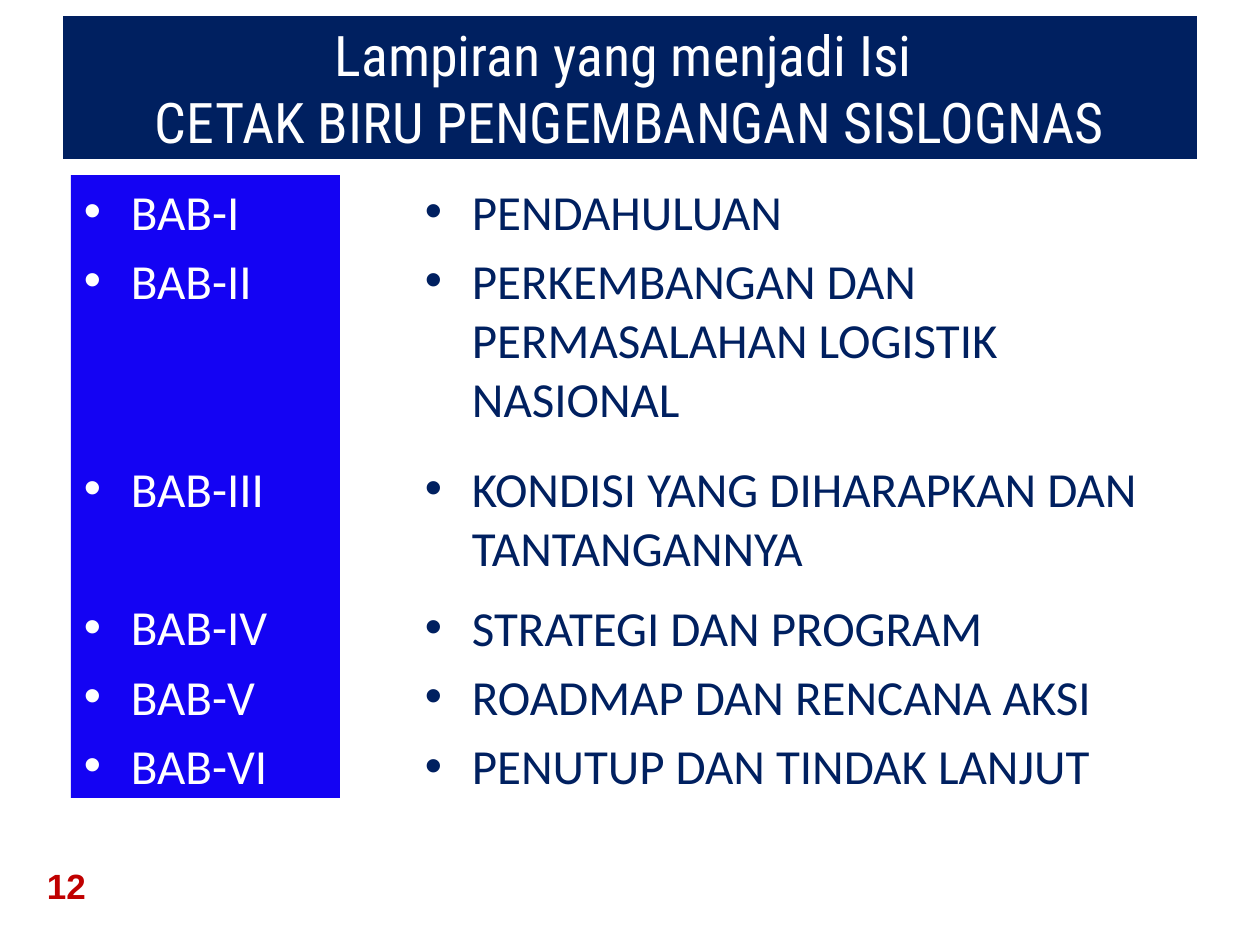
from dataclasses import dataclass

from lxml import etree
from pptx import Presentation
from pptx.dml.color import RGBColor
from pptx.enum.text import MSO_ANCHOR, MSO_AUTO_SIZE, PP_ALIGN
from pptx.oxml.ns import qn
from pptx.util import Emu, Pt

TOP, MIDDLE = MSO_ANCHOR.TOP, MSO_ANCHOR.MIDDLE
LEFT, CENTER = PP_ALIGN.LEFT, PP_ALIGN.CENTER
NO_AUTOFIT = MSO_AUTO_SIZE.NONE
TWO_CONTENT = 3  # layout with a title and two lists


@dataclass(frozen=True)
class Theme:
    navy: str = "002060"
    blue: str = "1403F3"
    white: str = "FFFFFF"
    red: str = "C00000"
    title_font: str = "Roboto Condensed"
    list_font: str = "Calibri"
    number_font: str = "Arial"
    title_size: int = 32
    list_size: int = 28
    number_size: int = 20
    gap: int = 6
    row: float = 39.6  # one list line with its gap


THEME = Theme()

# Chapter, title, gap before each in points
CHAPTERS = [
    ("BAB-I", THEME.gap, "PENDAHULUAN", THEME.gap),
    ("BAB-II", THEME.gap, "PERKEMBANGAN DAN PERMASALAHAN LOGISTIK NASIONAL", THEME.gap),
    ("BAB-III", THEME.gap + 2 * THEME.row, "KONDISI YANG DIHARAPKAN DAN TANTANGANNYA", 3 * THEME.gap),
    ("BAB-IV", THEME.gap + THEME.row, "STRATEGI DAN PROGRAM", 2 * THEME.gap),
    ("BAB-V", THEME.gap, "ROADMAP DAN RENCANA AKSI", THEME.gap),
    ("BAB-VI", THEME.gap, "PENUTUP DAN TINDAK LANJUT", THEME.gap),
]


def px(n):
    return Emu(round(n * 914400 / 126))


def place(sp, x, y, w, h, fill=None):
    sp.left, sp.top, sp.width, sp.height = px(x), px(y), px(w), px(h)
    if fill:
        sp.fill.solid()
        sp.fill.fore_color.rgb = RGBColor.from_string(fill)


def set_frame(tf, anchor=TOP, inset_x=13, inset_y=6):
    tf.word_wrap = True
    tf.auto_size = NO_AUTOFIT
    tf.vertical_anchor = anchor
    tf.margin_left = tf.margin_right = px(inset_x)
    tf.margin_top = tf.margin_bottom = px(inset_y)


def write(p, text, font, size, color, bold=False, align=LEFT, before=0):
    p.text = text
    p.alignment = align
    p.space_before = Pt(before)
    for r in p.runs:
        r.font.name = font
        r.font.size = Pt(size)
        r.font.bold = bold
        r.font.color.rgb = RGBColor.from_string(color)


def add_bullet(p, indent=47):
    pPr = p._p.get_or_add_pPr()
    pPr.set("marL", str(px(indent)))
    pPr.set("indent", str(-px(indent)))
    etree.SubElement(pPr, qn("a:buFont")).set("typeface", "Arial")
    etree.SubElement(pPr, qn("a:buChar")).set("char", "•")


def fill_title(sp, text):
    place(sp, 63, 16, 1134, 143, THEME.navy)
    set_frame(sp.text_frame, MIDDLE)
    write(sp.text_frame.paragraphs[0], text, THEME.title_font,
          THEME.title_size, THEME.white, align=CENTER)


def fill_list(sp, items, color):
    tf = sp.text_frame
    set_frame(tf)
    for i, (text, before) in enumerate(items):
        p = tf.add_paragraph() if i else tf.paragraphs[0]
        write(p, text, THEME.list_font, THEME.list_size, color, before=before)
        add_bullet(p)


def add_page_number(s, number):
    sp = s.shapes.add_textbox(px(29), px(847), px(78), px(78))
    set_frame(sp.text_frame, MIDDLE, 18, 9)
    write(sp.text_frame.paragraphs[0], number, THEME.number_font,
          THEME.number_size, THEME.red, bold=True)


def main():
    prs = Presentation()
    prs.slide_width, prs.slide_height = px(1260), px(945)
    s = prs.slides.add_slide(prs.slide_layouts[TWO_CONTENT])
    title, chapters, contents = s.placeholders

    # Title band
    fill_title(title, "Lampiran yang menjadi Isi \vCETAK BIRU PENGEMBANGAN SISLOGNAS")

    # Chapter numbers beside chapter titles
    place(chapters, 71, 175, 269, 623, THEME.blue)
    fill_list(chapters, [(c, gap) for c, gap, _, _ in CHAPTERS], THEME.white)
    place(contents, 412, 175, 753, 623)
    fill_list(contents, [(t, gap) for _, _, t, gap in CHAPTERS], THEME.navy)

    # Page number
    add_page_number(s, "12")
    prs.save("out.pptx")


if __name__ == "__main__":
    main()
